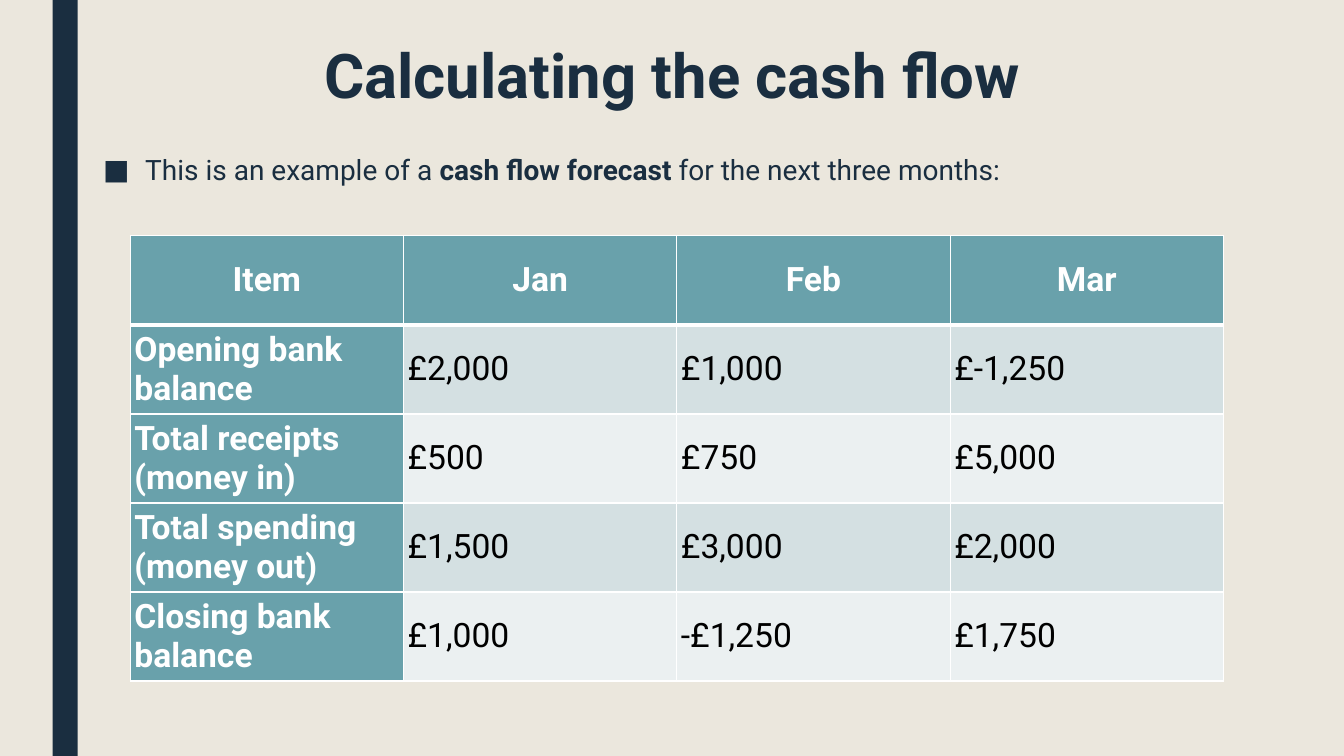
import lxml.etree
import pptx
import pptx.dml.color
import pptx.enum.shapes
import pptx.enum.text
import pptx.oxml.ns
import pptx.util

Pt = pptx.util.Pt
PP_ALIGN = pptx.enum.text.PP_ALIGN
ANCHOR = pptx.enum.text.MSO_ANCHOR
NAVY, TEAL, WHITE, BLACK = "1A2E40", "69A1AB", "FFFFFF", "000000"
BANDS = ["D4E0E2", "EBF0F1"]


def paint(color_format, color):
    """Set a fill's or font's colour from a hex string."""
    if hasattr(color_format, "solid"):
        color_format.solid()
        color_format = color_format.fore_color
    color_format.rgb = pptx.dml.color.RGBColor.from_string(color)


def add_child(parent, tag, **attributes):
    return lxml.etree.SubElement(parent, pptx.oxml.ns.qn(tag), attributes)


deck = pptx.Presentation()
deck.slide_width, deck.slide_height = Pt(960), Pt(540)
slide = deck.slides.add_slide(deck.slide_layouts[1])
paint(slide.background.fill, "EBE7DD")

side_bar = slide.shapes.add_shape(
    pptx.enum.shapes.MSO_SHAPE.RECTANGLE, Pt(37.5), 0, Pt(18), Pt(540))
side_bar.shadow.inherit = False
paint(side_bar.fill, NAVY)
side_bar.line.fill.background()

heading, intro = slide.placeholders
for placeholder, top, height in [(heading, 29, 67.5), (intro, 107.5, 378.5)]:
    placeholder.left, placeholder.top = Pt(66.5), Pt(top)
    placeholder.width, placeholder.height = Pt(828), Pt(height)
    placeholder.text_frame.auto_size = pptx.enum.text.MSO_AUTO_SIZE.NONE
    placeholder.text_frame.vertical_anchor = ANCHOR.TOP

title_line = heading.text_frame.paragraphs[0]
title_line.text = "Calculating the cash flow"
title_line.alignment = PP_ALIGN.CENTER
title_line.line_spacing = 0.89
title_line.font.size = Pt(44)
title_line.font.bold = True

intro_line = intro.text_frame.paragraphs[0]
for words, bold in [("This is an example of a ", False),
                    ("cash flow forecast", True),
                    (" for the next three months:", False)]:
    run = intro_line.add_run()
    run.text = words
    run.font.bold = bold
intro_line.line_spacing = 0.94
intro_line.space_before, intro_line.space_after = Pt(0), Pt(2)
indent = intro_line._p.get_or_add_pPr()
indent.set("marL", str(Pt(30)))
indent.set("indent", str(Pt(-30)))
add_child(indent, "a:buFont", typeface="Roboto")
add_child(indent, "a:buChar", char="■")
intro_line.font.size = Pt(20)

for line in (title_line, intro_line):
    line.font.name = "Roboto"
    paint(line.font.color, NAVY)

forecast = [
    ["Item", "Jan", "Feb", "Mar"],
    ["Opening bank balance", "£2,000", "£1,000", "£-1,250"],
    ["Total receipts (money in)", "£500", "£750", "£5,000"],
    ["Total spending (money out)", "£1,500", "£3,000", "£2,000"],
    ["Closing bank balance", "£1,000", "-£1,250", "£1,750"],
]
table = slide.shapes.add_table(
    len(forecast), len(forecast[0]), Pt(93), Pt(168.5), Pt(781), Pt(318)).table
for column in table.columns:
    column.width = Pt(195.25)
for row in table.rows:
    row.height = Pt(63.6)

for r, items in enumerate(forecast):
    for c, item in enumerate(items):
        cell = table.cell(r, c)
        is_label = r == 0 or c == 0
        cell.text = item
        cell.vertical_anchor = ANCHOR.MIDDLE
        cell.margin_left = cell.margin_right = Pt(3)
        cell.margin_top = cell.margin_bottom = Pt(3)

        for side in "LRTB":
            below_header = (r, side) in [(0, "B"), (1, "T")]
            border = add_child(cell._tc.get_or_add_tcPr(), "a:ln" + side,
                               w=str(Pt(3 if below_header else 1)))
            add_child(add_child(border, "a:solidFill"), "a:srgbClr", val=WHITE)
        paint(cell.fill, TEAL if is_label else BANDS[(r - 1) % 2])

        entry = cell.text_frame.paragraphs[0]
        entry.alignment = PP_ALIGN.CENTER if r == 0 else PP_ALIGN.LEFT
        entry.font.name = "Roboto"
        entry.font.size = Pt(24)
        entry.font.bold = is_label
        paint(entry.font.color, WHITE if is_label else BLACK)

deck.save("out.pptx")
